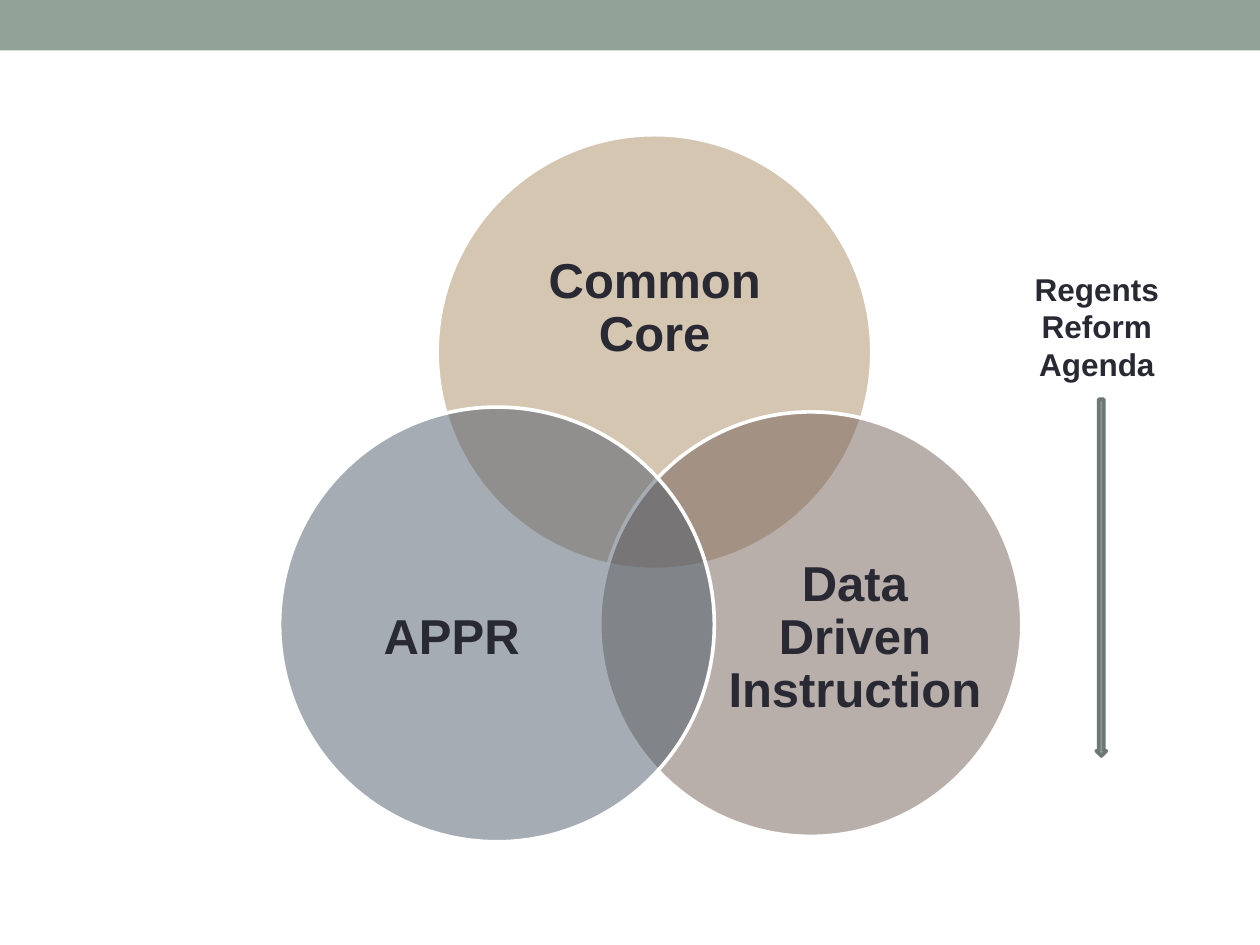
from lxml import etree
from pptx import Presentation
from pptx.dml.color import RGBColor
from pptx.enum import shapes, text
from pptx.oxml import ns
from pptx.util import Pt

WHITE = RGBColor(0xFF, 0xFF, 0xFF)
INK = RGBColor(0x29, 0x29, 0x34)
SAGE = RGBColor(0x93, 0xA2, 0x99)
DARK_SAGE = RGBColor(0x6D, 0x78, 0x71)
SAND = RGBColor(0xAD, 0x8F, 0x67)
BROWN = RGBColor(0x72, 0x60, 0x56)
SLATE = RGBColor(0x4C, 0x5A, 0x6A)

FONT = "Arial"
OUTLINE = 2.08
OPACITY = 50

BAND = (0, 0, 720, 28.8)
ARROW = (626.4, 228.2, 5.8, 203.8)
CIRCLES = [
    ("Common Core", SAND, (249.8, 77, 248.4, 248.4), (283, 121, 182.2, 111.6)),
    ("Data Driven Instruction", BROWN, (342.7, 235.4, 241.2, 242.6), (416, 298.1, 145, 133.2)),
    ("APPR", SLATE, (159.8, 232.6, 248.4, 248.4), (183.6, 296.6, 149, 136.8)),
]
AGENDA = ("Regents Reform Agenda", (578.9, 150.5, 95.8, 72.7))


def add_figure(page, kind, place, fill, outline=None):
    figure = page.shapes.add_shape(kind, *map(Pt, place))
    figure.shadow.inherit = False
    figure.fill.solid()
    figure.fill.fore_color.rgb = fill
    if outline is None:
        figure.line.fill.background()
    else:
        figure.line.color.rgb = outline
        figure.line.width = Pt(OUTLINE)
    return figure


def make_translucent(figure):
    color = figure.fill._xPr.find(ns.qn("a:solidFill"))[0]
    etree.SubElement(color, ns.qn("a:alpha")).set("val", str(OPACITY * 1000))


def add_label(page, words, place, size):
    box = page.shapes.add_textbox(*map(Pt, place))
    frame = box.text_frame
    frame.word_wrap = True
    para = frame.paragraphs[0]
    para.alignment = text.PP_ALIGN.CENTER
    span = para.add_run()
    span.text = words
    span.font.name = FONT
    span.font.size = Pt(size)
    span.font.bold = True
    span.font.color.rgb = INK
    return frame


def add_circle_label(page, words, place):
    frame = add_label(page, words, place, 28)
    frame.vertical_anchor = text.MSO_ANCHOR.MIDDLE
    frame.margin_left = frame.margin_right = frame.margin_top = frame.margin_bottom = 0
    frame.paragraphs[0].line_spacing = 0.9


def main():
    deck = Presentation()
    deck.slide_width, deck.slide_height = Pt(720), Pt(540)
    page = deck.slides.add_slide(deck.slide_layouts[6])

    add_figure(page, shapes.MSO_SHAPE.RECTANGLE, BAND, SAGE)
    for words, color, circle_place, label_place in CIRCLES:
        make_translucent(add_figure(page, shapes.MSO_SHAPE.OVAL, circle_place, color, WHITE))
        add_circle_label(page, words, label_place)

    add_figure(page, shapes.MSO_SHAPE.DOWN_ARROW, ARROW, SAGE, DARK_SAGE)
    agenda_words, agenda_place = AGENDA
    agenda = add_label(page, agenda_words, agenda_place, 18)
    agenda.auto_size = text.MSO_AUTO_SIZE.SHAPE_TO_FIT_TEXT

    deck.save("out.pptx")


if __name__ == "__main__":
    main()
